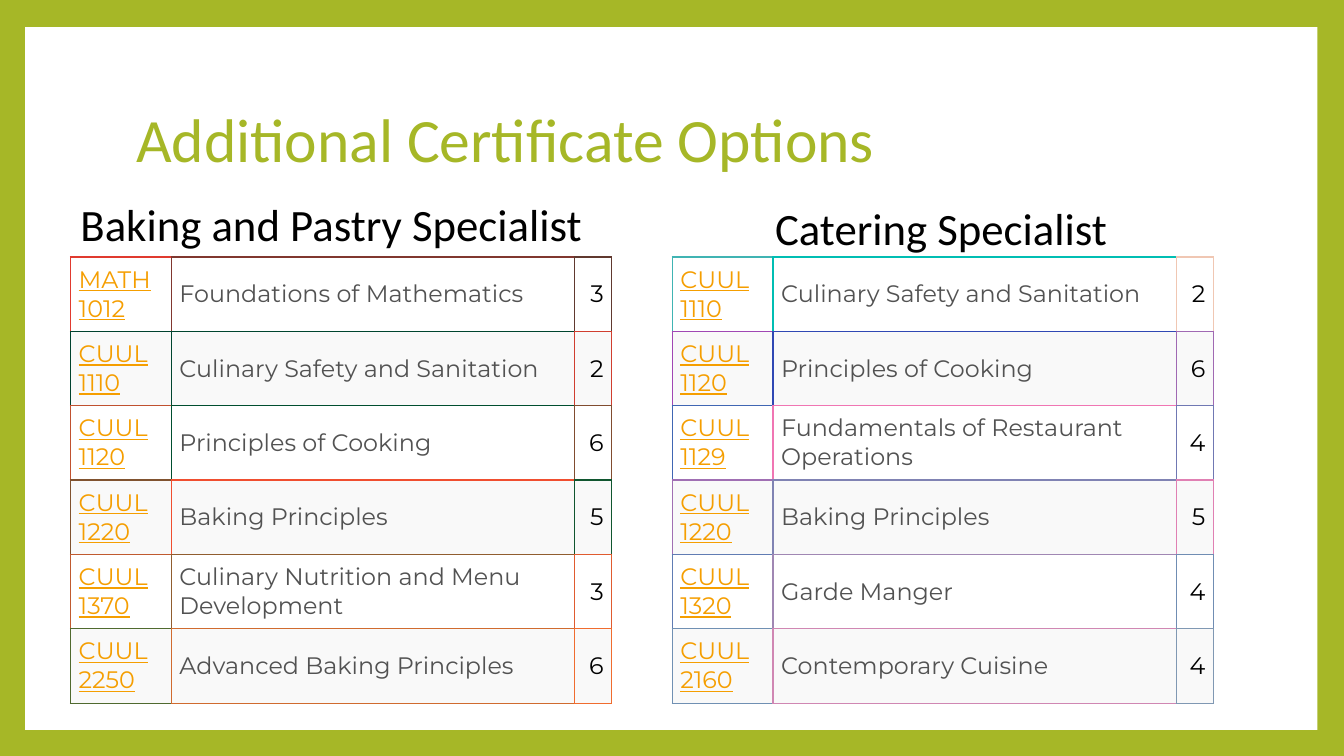
from lxml.etree import SubElement
from pptx import Presentation
from pptx.dml.color import RGBColor
from pptx.enum.shapes import MSO_SHAPE
from pptx.enum.text import MSO_ANCHOR, MSO_AUTO_SIZE, PP_ALIGN
from pptx.oxml.ns import qn
from pptx.util import Pt

GREEN = RGBColor(0xA6, 0xB7, 0x27)
WHITE = RGBColor(0xFF, 0xFF, 0xFF)
PALE_GRAY = RGBColor(0xF9, 0xF9, 0xF9)
ORANGE = RGBColor(0xF5, 0x9E, 0x00)
GRAY = RGBColor(0x52, 0x52, 0x52)
BLACK = RGBColor(0, 0, 0)

TITLE = "Additional Certificate Options"
# heading, its box (left, top, width, height), whether it wraps
HEADINGS = [
    ("Catering Specialist", (546.5, 139.7, 270, 46), True),
    ("Baking and Pastry Specialist", (50.4, 136.8, 388, 46), False),
]
# course code, course name, credits, edge colours of the three cells
BAKING_COURSES = [
    ("MATH 1012", "Foundations of Mathematics", "3", "E03A2F 80372F 60392F"),
    ("CUUL 1110", "Culinary Safety and Sanitation", "2", "00422F 00452F D03E2F"),
    ("CUUL 1120", "Principles of Cooking", "6", "C0512F 004E2F 804C2F"),
    ("CUUL 1220", "Baking Principles", "5", "80522F F04E2F 10562F"),
    ("CUUL 1370", "Culinary Nutrition and Menu Development", "3", "C05A2F 905D2F E05B2F"),
    ("CUUL 2250", "Advanced Baking Principles", "6", "506A2F D06B2F F06C2F"),
]
CATERING_COURSES = [
    ("CUUL 1110", "Culinary Safety and Sanitation", "2", "40B4B3 00BEB3 F0C7B3"),
    ("CUUL 1120", "Principles of Cooking", "6", "A047B4 3048B4 A069B3"),
    ("CUUL 1129", "Fundamentals of Restaurant Operations", "4", "4066B3 F076B3 7078B3"),
    ("CUUL 1220", "Baking Principles", "5", "A06FB3 8083B3 E080B3"),
    ("CUUL 1320", "Garde Manger", "4", "607CB3 A087B3 708DB3"),
    ("CUUL 2160", "Contemporary Cuisine", "4", "7090B3 D087B3 8098B3"),
]
TABLES = [(50.4, BAKING_COURSES), (480.2, CATERING_COURSES)]
TABLE_TOP, ROW_HEIGHT = 183.6, 52.3
COLUMN_WIDTHS = [72, 288, 26.6]
COLUMN_FORMATS = [
    {"color": ORANGE, "underline": True, "alignment": PP_ALIGN.LEFT, "margin_right": 5.8},
    {"color": GRAY, "underline": False, "alignment": PP_ALIGN.LEFT, "margin_right": 3.6},
    {"color": BLACK, "underline": False, "alignment": PP_ALIGN.RIGHT, "margin_right": 5.8},
]


def set_attributes(target, values):
    for name, value in values.items():
        setattr(target, name, value)


def place(shape, box):
    names = ("left", "top", "width", "height")
    set_attributes(shape, dict(zip(names, map(Pt, box))))


def format_text(paragraph, font_name, size, color, underline=False):
    set_attributes(paragraph.font, {"name": font_name, "size": Pt(size), "underline": underline})
    paragraph.font.color.rgb = color


def add_border(cell, tag, color, width):
    line = SubElement(cell._tc.get_or_add_tcPr(), qn(tag), w=str(Pt(width)))
    fill = SubElement(line, qn("a:solidFill"))
    SubElement(fill, qn("a:srgbClr"), val=color)


def draw_borders(cell, edges, row, column):
    """A cell shares its right and bottom edge colours with its neighbours."""
    own = edges[row][column]
    last_column = column == len(edges[row]) - 1
    last_row = row == len(edges) - 1
    right = (own, 0.75) if last_column else (edges[row][column + 1], 1)
    bottom = (own, 0.75) if last_row else (edges[row + 1][column], 1)
    add_border(cell, "a:lnL", own, 1)
    add_border(cell, "a:lnR", *right)
    add_border(cell, "a:lnT", own, 1)
    add_border(cell, "a:lnB", *bottom)


def add_course_table(slide, left, courses):
    box = (left, TABLE_TOP, sum(COLUMN_WIDTHS), ROW_HEIGHT * len(courses))
    table = slide.shapes.add_table(len(courses), len(COLUMN_WIDTHS), *map(Pt, box)).table
    set_attributes(table, {"first_row": False, "horz_banding": False})
    for column, width in zip(table.columns, COLUMN_WIDTHS):
        column.width = Pt(width)
    edges = [course[3].split() for course in courses]
    for row, course in enumerate(courses):
        for column, style in enumerate(COLUMN_FORMATS):
            cell = table.cell(row, column)
            cell.text = course[column]
            set_attributes(cell, {
                "vertical_anchor": MSO_ANCHOR.MIDDLE,
                "margin_left": Pt(5.8),
                "margin_top": Pt(5.8),
                "margin_bottom": Pt(5.8),
                "margin_right": Pt(style["margin_right"]),
            })
            draw_borders(cell, edges, row, column)
            cell.fill.solid()
            cell.fill.fore_color.rgb = PALE_GRAY if row % 2 else WHITE
            paragraph = cell.text_frame.paragraphs[0]
            paragraph.alignment = style["alignment"]
            format_text(paragraph, "Montserrat", 17, style["color"], style["underline"])


def add_panel(slide):
    panel = slide.shapes.add_shape(MSO_SHAPE.RECTANGLE, *map(Pt, (18, 19.4, 923, 502)))
    panel.shadow.inherit = False
    panel.fill.solid()
    panel.fill.fore_color.rgb = WHITE
    panel.line.fill.background()
    slide.shapes._spTree.insert(2, panel._element)  # behind the title


def add_title(slide):
    title = slide.shapes.title
    place(title, (90, 48.2, 777.6, 106.6))
    title.text_frame.text = TITLE
    title.text_frame.vertical_anchor = MSO_ANCHOR.MIDDLE
    paragraph = title.text_frame.paragraphs[0]
    set_attributes(paragraph, {"alignment": PP_ALIGN.LEFT, "line_spacing": 0.9})
    format_text(paragraph, "Calibri", 44, GREEN)


def add_heading(slide, text, box, wraps):
    frame = slide.shapes.add_textbox(*map(Pt, box)).text_frame
    frame.text = text
    set_attributes(frame, {"word_wrap": wraps, "auto_size": MSO_AUTO_SIZE.SHAPE_TO_FIT_TEXT})
    format_text(frame.paragraphs[0], "Calibri", 32, BLACK)


def main():
    presentation = Presentation()
    set_attributes(presentation, {"slide_width": Pt(960), "slide_height": Pt(540)})
    slide = presentation.slides.add_slide(presentation.slide_layouts[5])
    slide.background.fill.solid()
    slide.background.fill.fore_color.rgb = GREEN
    add_panel(slide)
    add_title(slide)
    for left, courses in TABLES:
        add_course_table(slide, left, courses)
    for heading in HEADINGS:
        add_heading(slide, *heading)
    presentation.save("out.pptx")


if __name__ == "__main__":
    main()
